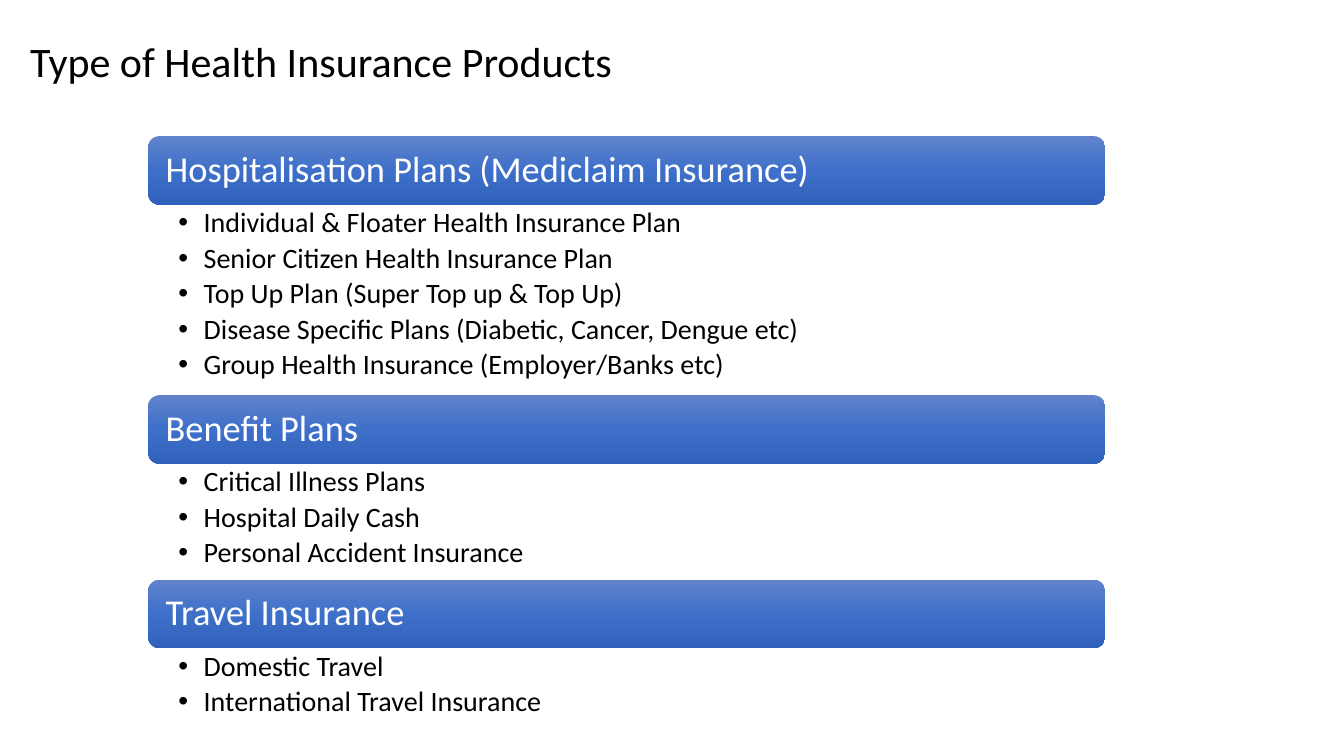
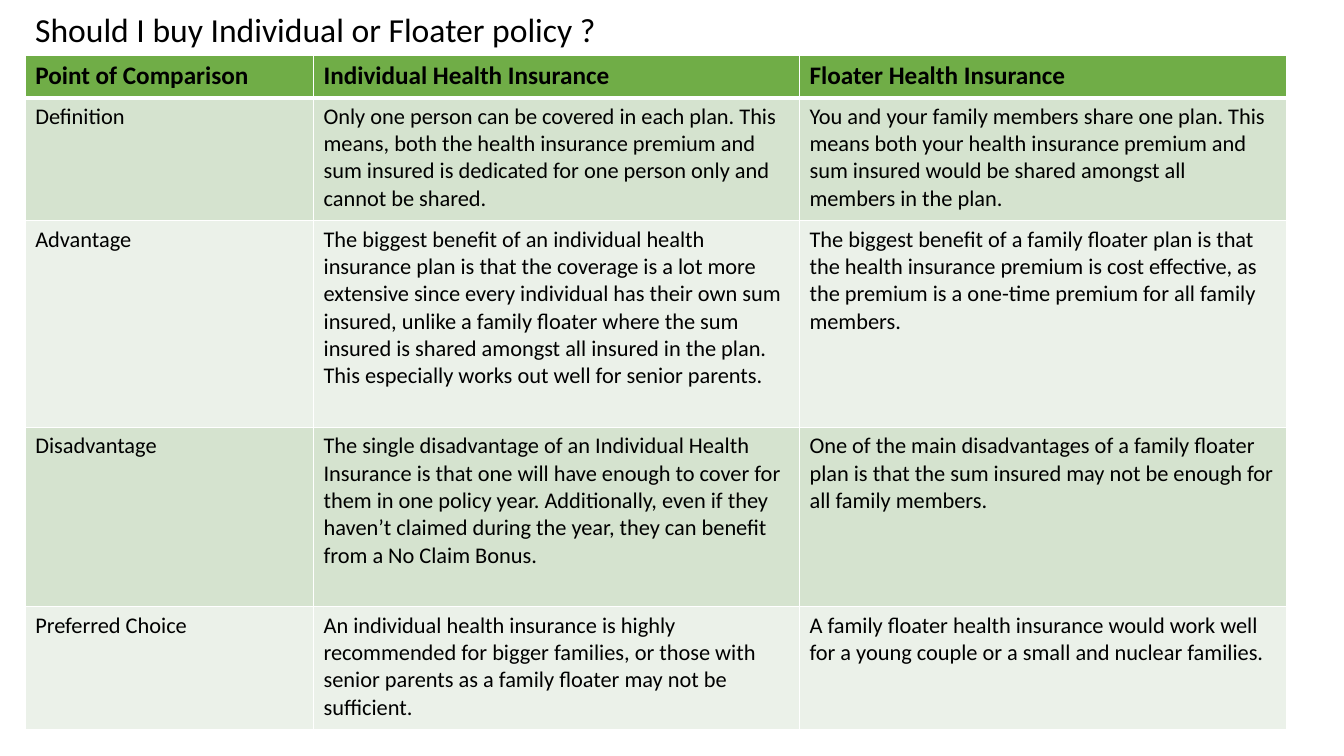
from copy import deepcopy
from dataclasses import dataclass

from lxml.etree import SubElement
from pptx import Presentation
from pptx.dml.color import RGBColor
from pptx.enum.shapes import MSO_SHAPE
from pptx.enum.text import MSO_ANCHOR
from pptx.oxml.ns import qn
from pptx.util import Inches, Pt

# Shared look
FONT = "Calibri"
HEX = {
    "ink": "000000", "white": "FFFFFF",
    "top": "6183CB", "mid": "3E70CA", "low": "3062BB",
    "head": "70AD47", "dark": "D5E3CF", "light": "EBF1E9",
}
BAR_LEFT, BAR_TOP, BAR_WIDE, BAR_TALL = 1.47, 1.35, 9.49, 0.68


@dataclass
class Group:
    head: str
    items: list[str]
    tall: float


@dataclass
class Row:
    cells: list[str]
    tall: float


GROUPS = [
    Group("Hospitalisation Plans (Mediclaim Insurance)", [
        "Individual & Floater Health Insurance Plan",
        "Senior Citizen Health Insurance Plan",
        "Top Up Plan (Super Top up & Top Up)",
        "Disease Specific Plans (Diabetic, Cancer, Dengue etc)",
        "Group Health Insurance (Employer/Banks etc)",
    ], 1.89),
    Group("Benefit Plans", [
        "Critical Illness Plans",
        "Hospital Daily Cash",
        "Personal Accident Insurance",
    ], 1.15),
    Group("Travel Insurance", [
        "Domestic Travel",
        "International Travel Insurance",
    ], 0.77),
]

COLS = [2.86, 4.82, 4.83]
ROWS = [
    Row(["Point of Comparison", "Individual Health Insurance",
         "Floater Health Insurance"], 0.42),
    Row(["Definition",
         "Only one person can be covered in each plan. This means, both the "
         "health insurance premium and sum insured is dedicated for one person "
         "only and cannot be shared.",
         "You and your family members share one plan. This means both your "
         "health insurance premium and sum insured would be shared amongst all "
         "members in the plan."], 1.22),
    Row(["Advantage",
         "The biggest benefit of an individual health insurance plan is that "
         "the coverage is a lot more extensive since every individual has their "
         "own sum insured, unlike a family floater where the sum insured is "
         "shared amongst all insured in the plan. This especially works out "
         "well for senior parents.",
         "The biggest benefit of a family floater plan is that the health "
         "insurance premium is cost effective, as the premium is a one-time "
         "premium for all family members."], 2.05),
    Row(["Disadvantage",
         "The single disadvantage of an Individual Health Insurance is that "
         "one will have enough to cover for them in one policy year. "
         "Additionally, even if they haven’t claimed during the year, they can "
         "benefit from a No Claim Bonus.",
         "One of the main disadvantages of a family floater plan is that the "
         "sum insured may not be enough for all family members."], 1.78),
    Row(["Preferred Choice",
         "An individual health insurance is highly recommended for bigger "
         "families, or those with senior parents as a family floater may not "
         "be sufficient.",
         "A family floater health insurance would work well for a young couple "
         "or a small and nuclear families."], 1.22),
]


def color(name: str) -> RGBColor:
    return RGBColor.from_string(HEX[name])


def apply(thing, form: dict) -> None:
    for key, value in form.items():
        setattr(thing, key, value)


def write(para, text: str, size: float, ink: str = "ink", bold: bool = False, **form) -> None:
    run = para.add_run()
    run.text = text
    apply(run.font, {"name": FONT, "size": Pt(size), "bold": bold})
    run.font.color.rgb = color(ink)
    apply(para, form)


def add_box(slide, left: float, top: float, wide: float, tall: float, **form):
    box = slide.shapes.add_textbox(Inches(left), Inches(top), Inches(wide), Inches(tall))
    apply(box.text_frame, {"word_wrap": True, **form})
    return box.text_frame


def add_title(slide, text: str, size: float, left: float, top: float, tall: float) -> None:
    frame = add_box(slide, left, top, 10, tall, vertical_anchor=MSO_ANCHOR.BOTTOM)
    write(frame.paragraphs[0], text, size, line_spacing=0.9)


def add_bar(slide, text: str, top: float) -> None:
    bar = slide.shapes.add_shape(
        MSO_SHAPE.ROUNDED_RECTANGLE, Inches(BAR_LEFT), Inches(top),
        Inches(BAR_WIDE), Inches(BAR_TALL))
    bar.shadow.inherit = False
    bar.line.fill.background()
    # Three-stop blend from top to bottom
    bar.fill.gradient()
    bar.fill.gradient_angle = 270
    stops = bar.element.find(".//" + qn("a:gsLst"))
    stops.append(deepcopy(stops[0]))
    for stop, name, place in zip(bar.fill.gradient_stops, ("top", "mid", "low"), (0, 0.5, 1)):
        stop.color.rgb = color(name)
        stop.position = place
    apply(bar.text_frame, {
        "word_wrap": True, "vertical_anchor": MSO_ANCHOR.MIDDLE,
        "margin_left": Inches(0.14), "margin_right": Inches(0.14),
    })
    para = bar.text_frame.paragraphs[0]
    write(para, text, 26, "white", line_spacing=0.9)
    para.alignment = 1


def add_list(slide, items: list[str], top: float, tall: float) -> None:
    frame = add_box(
        slide, BAR_LEFT, top, BAR_WIDE, tall,
        margin_left=Inches(0.3), margin_right=Inches(0.2),
        margin_top=Inches(0.04), margin_bottom=Inches(0.04))
    for num, item in enumerate(items):
        para = frame.add_paragraph() if num else frame.paragraphs[0]
        write(para, item, 20, line_spacing=0.9, space_after=Pt(3.75))
        props = para._p.get_or_add_pPr()
        props.set("marL", str(Inches(0.5)))
        props.set("marL", str(Inches(0.25)))
        props.set("indent", str(Inches(-0.25)))
        SubElement(props, qn("a:buFont"), typeface="Arial")
        SubElement(props, qn("a:buChar"), char="•")


def edge(cell, side: str, width: float) -> None:
    line = SubElement(cell._tc.get_or_add_tcPr(), qn("a:ln" + side), w=str(Pt(width)))
    fill = SubElement(line, qn("a:solidFill"))
    SubElement(fill, qn("a:srgbClr"), val=HEX["white"])


def add_grid(slide, left: float, top: float) -> None:
    table = slide.shapes.add_table(
        len(ROWS), len(COLS), Inches(left), Inches(top), Inches(sum(COLS)),
        Inches(sum(row.tall for row in ROWS))).table
    table.horz_banding = False
    for col, wide in zip(table.columns, COLS):
        col.width = Inches(wide)
    for num, row in enumerate(ROWS):
        table.rows[num].height = Inches(row.tall)
        first = num == 0
        shade = "head" if first else "dark" if num % 2 else "light"
        for cell, text in zip(table.rows[num].cells, row.cells):
            # Thick rule below the header, thin rules elsewhere
            thick = {"B": 3} if first else {"T": 3} if num == 1 else {}
            for side in "LRTB":
                edge(cell, side, thick.get(side, 1))
            cell.fill.solid()
            cell.fill.fore_color.rgb = color(shade)
            write(cell.text_frame.paragraphs[0], text, 18 if first else 16, bold=first)


def main() -> None:
    deck = Presentation()
    apply(deck, {"slide_width": Inches(13.33), "slide_height": Inches(7.5)})
    blank = deck.slide_layouts[6]

    # Product types
    slide = deck.slides.add_slide(blank)
    add_title(slide, "Type of Health Insurance Products", 30, 0.2, 0.15, 0.76)
    top = BAR_TOP
    for group in GROUPS:
        add_bar(slide, group.head, top)
        add_list(slide, group.items, top + BAR_TALL, group.tall)
        top += BAR_TALL + group.tall

    # Policy comparison
    slide = deck.slides.add_slide(blank)
    add_title(slide, "Should I buy Individual or Floater policy ?", 24, 0.25, 0, 0.54)
    add_grid(slide, 0.25, 0.55)

    deck.save("out.pptx")


if __name__ == "__main__":
    main()
